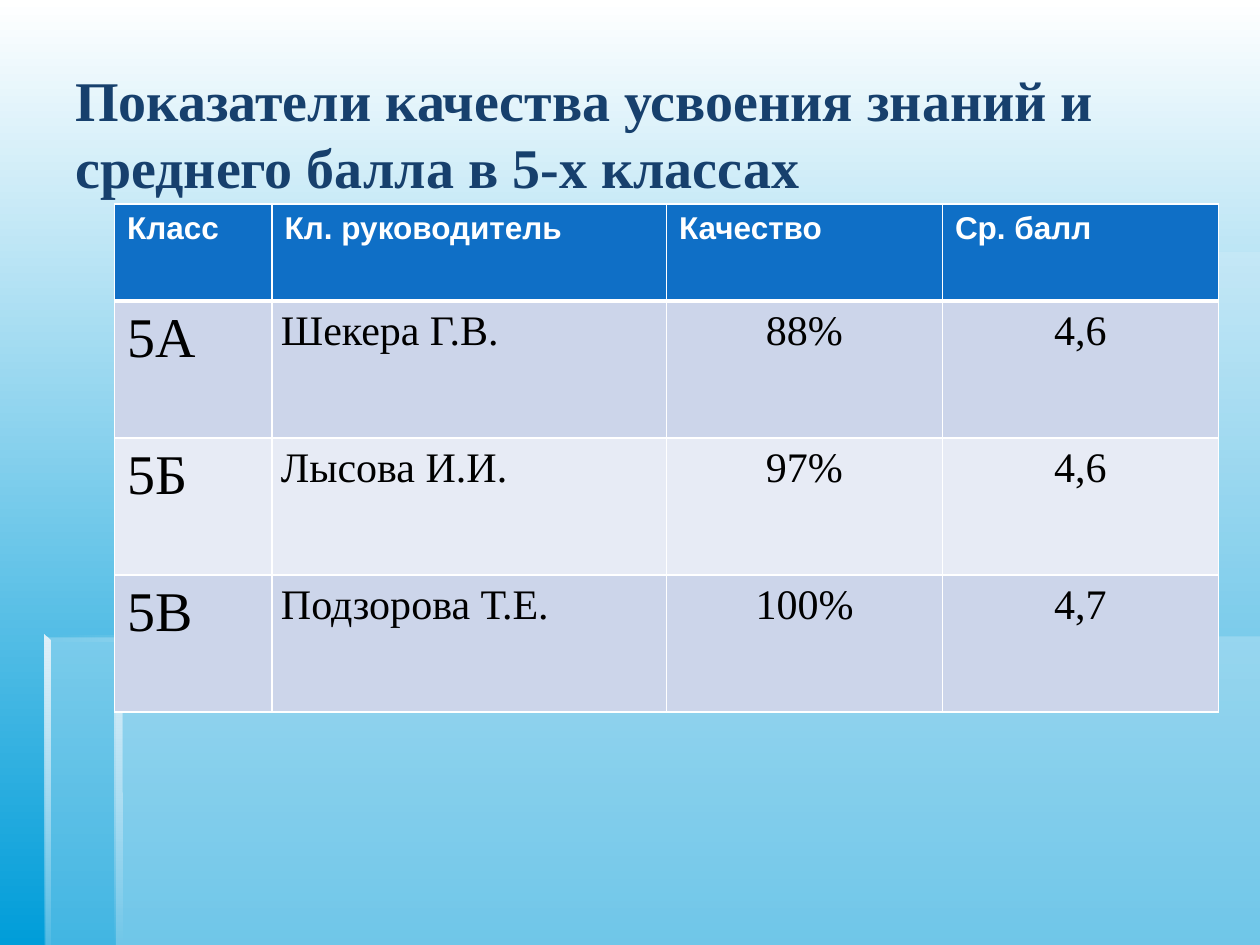
from dataclasses import dataclass

from lxml import etree
from pptx import Presentation
from pptx.dml.color import RGBColor
from pptx.enum.text import MSO_ANCHOR, PP_ALIGN
from pptx.oxml.ns import qn
from pptx.util import Inches, Pt

LEFT, CENTER, JUSTIFY = PP_ALIGN.LEFT, PP_ALIGN.CENTER, PP_ALIGN.JUSTIFY
MIDDLE = MSO_ANCHOR.MIDDLE
RIGHTWARD, DOWNWARD = 0, 270
COLUMNS, ROWS = 100, 75  # grid of the 10 x 7.5 inch slide


@dataclass(frozen=True)
class Theme:
    serif: str = "Times New Roman"
    sans: str = "Arial"
    white: str = "FFFFFF"
    black: str = "000000"
    sky: str = "009DD9"
    mist: str = "DBEFF9"
    glow: str = "E0F1FA"
    haze: str = "C9DBE4"
    navy: str = "17406D"
    header: str = "0F6FC6"
    bands: tuple = ("CCD5EA", "E7EBF5")
    large: int = 32
    medium: int = 24
    small: int = 18


def color(value):
    return RGBColor.from_string(value)


def set_opacity(element, percents):
    """Give each colour under element its opacity, in order."""
    for node, percent in zip(list(element.iter(qn("a:srgbClr"))), percents):
        if percent < 100:
            etree.SubElement(node, qn("a:alpha"), val=str(percent * 1000))


def rectangle(left, top, right, bottom):
    return [(left, top), (right, top), (right, bottom), (left, bottom)]


class Page:
    def __init__(self, deck, theme):
        self.theme = theme
        self.width, self.height = deck.slide_width, deck.slide_height
        self.slide = deck.slides.add_slide(deck.slide_layouts[6])

    def x(self, columns):
        return round(self.width * columns / COLUMNS)

    def y(self, rows):
        return round(self.height * rows / ROWS)

    def frame(self, left, top, width, height):
        return self.x(left), self.y(top), self.x(width), self.y(height)

    def gradient(self, fill, angle, colors):
        fill.gradient()
        fill.gradient_angle = angle
        for stop, value, position in zip(fill.gradient_stops, colors, (0, 1)):
            stop.color.rgb = color(value)
            stop.position = position

    def background(self, *colors):
        self.gradient(self.slide.background.fill, DOWNWARD, colors)

    def outline(self, points):
        start, *rest = [(self.x(across), self.y(down)) for across, down in points]
        builder = self.slide.shapes.build_freeform(*start)
        builder.add_line_segments(rest, close=True)
        shape = builder.convert_to_shape()
        shape.shadow.inherit = False
        shape.line.fill.background()
        return shape

    def panel(self, points, value, opacity):
        shape = self.outline(points)
        shape.fill.solid()
        shape.fill.fore_color.rgb = color(value)
        set_opacity(shape.element.spPr, [opacity])

    def edge(self, points, angle, colors, opacities):
        shape = self.outline(points)
        self.gradient(shape.fill, angle, colors)
        set_opacity(shape.element.spPr, opacities)

    def set_text(self, para, text, font, size, value, bold=False, align=LEFT):
        para.text = text
        para.alignment = align
        para.font.name, para.font.size = font, Pt(size)
        para.font.bold, para.font.color.rgb = bold, color(value)

    def title(self, text, *area):
        box = self.slide.shapes.add_textbox(*self.frame(*area))
        box.text_frame.word_wrap = True
        box.text_frame.vertical_anchor = MIDDLE
        self.set_text(box.text_frame.paragraphs[0], text, self.theme.serif,
                      self.theme.large, self.theme.navy, bold=True)

    def borders(self, cell, bottom):
        props = cell._tc.get_or_add_tcPr()
        for place, (side, points) in enumerate(
                [("L", 1), ("R", 1), ("T", 1), ("B", bottom)]):
            line = etree.Element(qn(f"a:ln{side}"), w=str(Pt(points)))
            fill = etree.SubElement(line, qn("a:solidFill"))
            etree.SubElement(fill, qn("a:srgbClr"), val=self.theme.white)
            props.insert(place, line)

    def cell(self, cell, text, row, column):
        theme, para = self.theme, cell.text_frame.paragraphs[0]
        header = row == 0
        cell.fill.solid()
        cell.fill.fore_color.rgb = color(
            theme.header if header else theme.bands[(row - 1) % 2])
        self.borders(cell, bottom=3 if header else 1)
        if header:
            self.set_text(para, text, theme.sans, theme.small, theme.white, bold=True)
        elif column == 0:
            self.set_text(para, text, theme.serif, theme.large, theme.black)
        else:
            self.set_text(para, text, theme.serif, theme.medium, theme.black,
                          align=JUSTIFY if column == 1 else CENTER)
            para.line_spacing = 1.15
            cell.margin_left = cell.margin_right = Inches(0.07)
            cell.margin_top = cell.margin_bottom = 0

    def table(self, left, top, widths, heights, records):
        area = self.frame(left, top, sum(widths), sum(heights))
        table = self.slide.shapes.add_table(len(heights), len(widths), *area).table
        table.first_row = table.horz_banding = False
        for column, width in zip(table.columns, widths):
            column.width = self.x(width)
        for row, height in zip(table.rows, heights):
            row.height = self.y(height)
        for row, record in enumerate(records):
            for column, text in enumerate(record):
                self.cell(table.cell(row, column), text, row, column)


def draw_panels(page):
    theme = page.theme
    fade_right = (RIGHTWARD, (theme.mist, theme.haze), (0, 100))
    page.panel(rectangle(9.2, 50.5, COLUMNS, ROWS), theme.mist, 30)
    page.panel([(9.4, 50.6), (3.6, 50.6), (3.6, ROWS), (COLUMNS, ROWS),
                (COLUMNS, 20), (9.4, 20)], theme.mist, 30)
    page.edge(rectangle(9.2, 20, 89.1, 20.5), *fade_right)
    page.edge([(9.2, 20), (9.2, 51), (9.7, 51), (9.6, 20.4)],
              DOWNWARD, (theme.glow, theme.mist), (100, 100))
    page.edge([(9.1, ROWS), (9.7, ROWS), (9.6, 50.8), (9.1, 50.4)],
              DOWNWARD, (theme.glow, theme.mist), (100, 0))
    page.edge(rectangle(3.5, 50.4, 53.5, 50.9), *fade_right)
    page.edge([(3.5, 50.4), (3.5, ROWS), (4, ROWS), (4, 50.9)],
              DOWNWARD, (theme.glow, theme.mist), (100, 10))


def main():
    deck = Presentation()
    deck.slide_width, deck.slide_height = Inches(10), Inches(7.5)
    theme = Theme()
    page = Page(deck, theme)
    page.background(theme.white, theme.sky)
    draw_panels(page)
    page.title("Показатели качества усвоения знаний и среднего балла в 5-х классах",
               5, 2.7, 91.7, 15.7)
    page.table(9.1, 16.2, [12.5, 31.3, 21.9, 21.9], [7.7] + [10.87] * 3, [
        ("Класс", "Кл. руководитель", "Качество", "Ср. балл"),
        ("5А", "Шекера Г.В.", "88%", "4,6"),
        ("5Б", "Лысова И.И.", "97%", "4,6"),
        ("5В", "Подзорова Т.Е.", "100%", "4,7"),
    ])
    deck.save("out.pptx")


if __name__ == "__main__":
    main()
